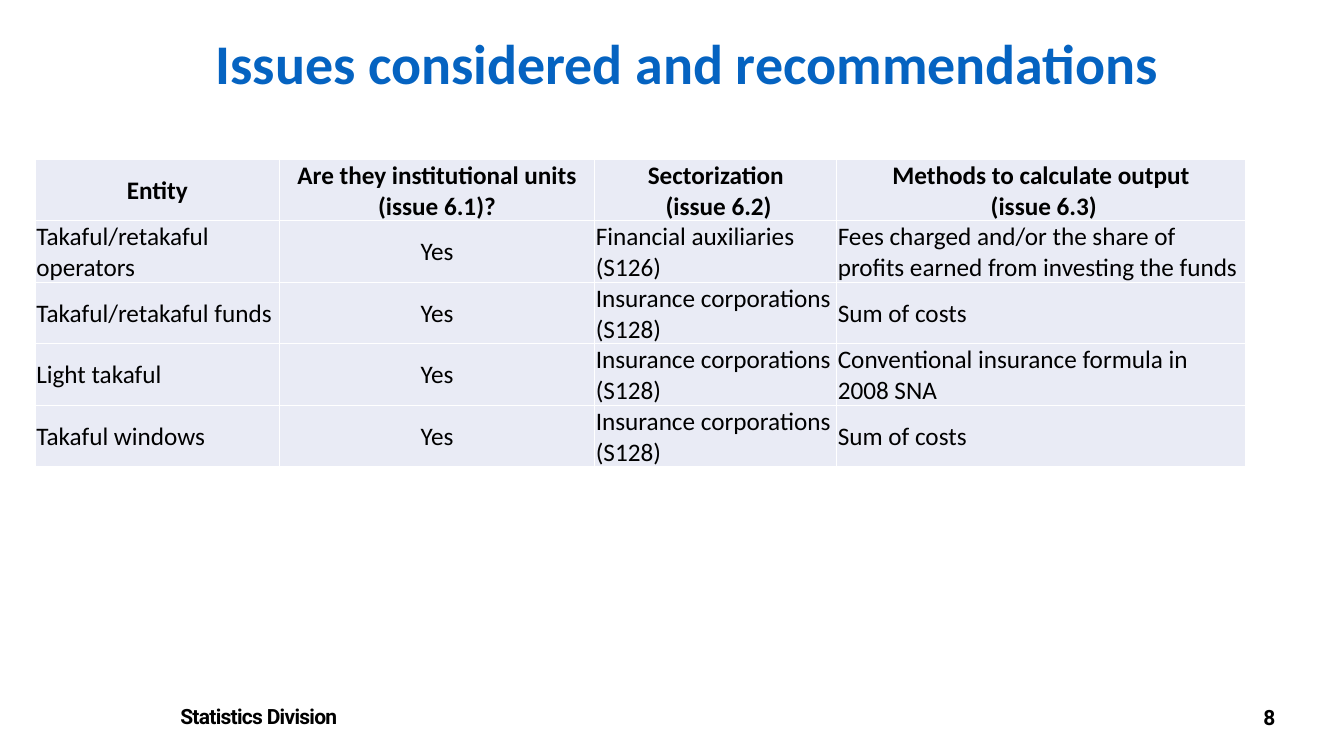
from lxml import etree
from pptx import Presentation
from pptx.dml.color import RGBColor
from pptx.enum.shapes import MSO_SHAPE
from pptx.enum.text import MSO_ANCHOR, PP_ALIGN
from pptx.oxml.ns import qn
from pptx.util import Pt

EMU_PER_PX = 9144  # 100 px to the inch
LEFT, CENTER, RIGHT = PP_ALIGN.LEFT, PP_ALIGN.CENTER, PP_ALIGN.RIGHT
MIDDLE = MSO_ANCHOR.MIDDLE
RECTANGLE = MSO_SHAPE.RECTANGLE
COLORS = {"title": "0563C1", "text": "000000", "cell": "E9EBF5", "white": "FFFFFF"}

COLUMN_WIDTHS = [242, 313, 240, 405]
ROW_HEIGHT = 61
CENTERED_COLUMN = 1
ENTITIES = [
    ["Entity", "Are they institutional units (issue 6.1)?",
     "Sectorization\v (issue 6.2)", "Methods to calculate output\v (issue 6.3)"],
    ["Takaful/retakaful operators", "Yes", "Financial auxiliaries (S126)",
     "Fees charged and/or the share of profits earned from investing the funds"],
    ["Takaful/retakaful funds", "Yes", "Insurance corporations (S128)", "Sum of costs"],
    ["Light takaful", "Yes", "Insurance corporations (S128)",
     "Conventional insurance formula in 2008 SNA"],
    ["Takaful windows", "Yes", "Insurance corporations (S128)", "Sum of costs"],
]


def px(*lengths):
    return [length * EMU_PER_PX for length in lengths]


def color(name):
    return RGBColor.from_string(COLORS[name])


def write(text_frame, text, size, font="Calibri", bold=True, align=LEFT,
          color_name="text", spacing=0):
    text_frame.word_wrap = True
    text_frame.text = text
    paragraph = text_frame.paragraphs[0]
    paragraph.alignment = align
    for run in paragraph.runs:
        run.font.size = Pt(size)
        run.font.name = font
        run.font.bold = bold
        run.font.color.rgb = color(color_name)
        if spacing:
            run._r.get_or_add_rPr().set("spc", str(spacing))


def add_title(slide, text, box):
    shape = slide.shapes.add_textbox(*px(*box))
    write(shape.text_frame, text, 40, align=CENTER, color_name="title")


def add_footer(slide, text, box, align):
    shape = slide.shapes.add_shape(RECTANGLE, *px(*box))
    shape.shadow.inherit = False
    shape.fill.solid()
    shape.fill.fore_color.rgb = color("white")
    shape.line.fill.background()
    shape.text_frame.vertical_anchor = MSO_ANCHOR.TOP
    write(shape.text_frame, text, 15, font="Roboto", align=align, spacing=-50)


def set_borders(cell):
    properties = cell._tc.get_or_add_tcPr()
    for index, side in enumerate(("a:lnL", "a:lnR", "a:lnT", "a:lnB")):
        line = etree.Element(qn(side), w=str(Pt(1)))
        fill = etree.SubElement(line, qn("a:solidFill"))
        etree.SubElement(fill, qn("a:srgbClr"), val=COLORS["white"])
        properties.insert(index, line)


def add_entity_table(slide, left, top):
    box = px(left, top, sum(COLUMN_WIDTHS), ROW_HEIGHT * len(ENTITIES))
    table = slide.shapes.add_table(len(ENTITIES), len(COLUMN_WIDTHS), *box).table
    table.horz_banding = False
    for column, width in zip(table.columns, px(*COLUMN_WIDTHS)):
        column.width = width
    for row_index, texts in enumerate(ENTITIES):
        table.rows[row_index].height = px(ROW_HEIGHT)[0]
        for column_index, text in enumerate(texts):
            cell = table.cell(row_index, column_index)
            cell.margin_left = cell.margin_right = cell.margin_top = px(1)[0]
            cell.margin_bottom = 0
            cell.vertical_anchor = MIDDLE
            cell.fill.solid()
            cell.fill.fore_color.rgb = color("cell")
            set_borders(cell)
            is_header = row_index == 0
            centered = is_header or column_index == CENTERED_COLUMN
            write(cell.text_frame, text, 18, bold=is_header,
                  align=CENTER if centered else LEFT)


def main():
    presentation = Presentation()
    presentation.slide_width, presentation.slide_height = px(1333, 750)
    slide = presentation.slides.add_slide(presentation.slide_layouts[6])

    # Footer
    add_footer(slide, "Statistics Division", (169, 693, 584, 35), LEFT)
    add_footer(slide, "8", (1085, 694, 190, 35), RIGHT)

    # Title and table
    add_title(slide, "Issues considered and recommendations", (166, 23, 1031, 77))
    add_entity_table(slide, 35, 158)

    presentation.save("out.pptx")


if __name__ == "__main__":
    main()
